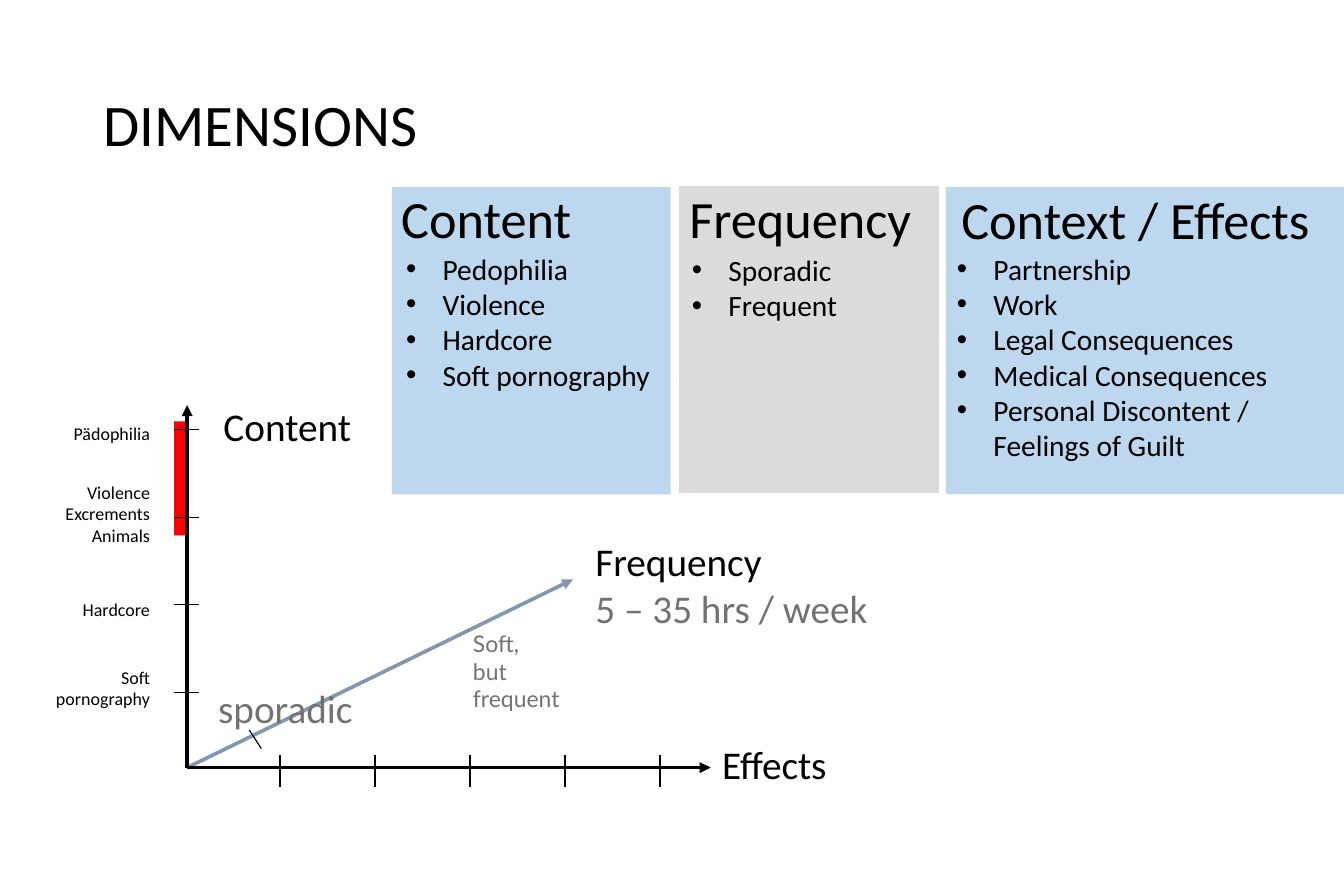
from lxml.etree import SubElement
from pptx import Presentation
from pptx.dml.color import RGBColor
from pptx.enum.shapes import MSO_CONNECTOR, MSO_SHAPE
from pptx.enum.text import MSO_ANCHOR, MSO_AUTO_SIZE, PP_ALIGN
from pptx.oxml.ns import qn
from pptx.util import Cm, Pt

BLACK, GREY, RED = "000000", "767171", "FF0000"
LIGHT_BLUE, LIGHT_GREY, STEEL_BLUE = "BDD7EE", "DBDBDB", "8497B0"
SLIDE_WIDTH, SLIDE_HEIGHT = 29.01, 19.05
ORIGIN = (4.04, 16.56)


def color(hex_string):
    return RGBColor.from_string(hex_string)


class SlideBuilder:
    """Holds the text style and the slide being built; lengths are in cm."""

    def __init__(self, slide, font="Calibri"):
        self.slide = slide
        self.font = font

    def style(self, paragraph, size, hex_string=BLACK, font=None, align=PP_ALIGN.LEFT):
        paragraph.alignment = align
        paragraph.space_before = Pt(0)
        paragraph.font.name = font or self.font
        paragraph.font.size = Pt(size)
        paragraph.font.bold = False
        paragraph.font.color.rgb = color(hex_string)

    def place(self, shape, left, top, width, height):
        shape.left, shape.top = Cm(left), Cm(top)
        shape.width, shape.height = Cm(width), Cm(height)

    def title(self, text, left, top, width, height):
        title = self.slide.shapes.title
        self.place(title, left, top, width, height)
        title.text_frame.text = text
        title.text_frame.vertical_anchor = MSO_ANCHOR.MIDDLE
        paragraph = title.text_frame.paragraphs[0]
        paragraph.line_spacing = 0.9
        self.style(paragraph, 36)

    def rectangle(self, left, top, width, height, fill):
        shape = self.slide.shapes.add_shape(
            MSO_SHAPE.RECTANGLE, Cm(left), Cm(top), Cm(width), Cm(height))
        shape.shadow.inherit = False
        shape.fill.solid()
        shape.fill.fore_color.rgb = color(fill)
        shape.line.fill.background()

    def text(self, text, left, top, width, height, size, **style):
        box = self.slide.shapes.add_textbox(Cm(left), Cm(top), Cm(width), Cm(height))
        box.text_frame.word_wrap = True
        box.text_frame.text = text
        for paragraph in box.text_frame.paragraphs:
            self.style(paragraph, size, **style)
        return box.text_frame

    def bullet_list(self, placeholder, items, left, top, width, height):
        """Fill a body placeholder and bring it in front of its panel."""
        self.place(placeholder, left, top, width, height)
        tree = placeholder.element.getparent()
        tree.append(placeholder.element)
        frame = placeholder.text_frame
        frame.text = "\n".join(items)
        frame.word_wrap = True
        frame.auto_size = MSO_AUTO_SIZE.NONE
        frame.vertical_anchor = MSO_ANCHOR.TOP
        for paragraph in frame.paragraphs:
            properties = paragraph._p.get_or_add_pPr()
            properties.set("marL", str(Cm(0.79)))
            properties.set("indent", str(Cm(-0.79)))
            SubElement(properties, qn("a:buFont")).set("typeface", "Arial")
            SubElement(properties, qn("a:buChar")).set("char", "•")
            self.style(paragraph, 18)

    def line(self, start, end, width, hex_string=BLACK, arrow=False):
        connector = self.slide.shapes.add_connector(
            MSO_CONNECTOR.STRAIGHT, *map(Cm, start + end))
        connector.line.width = Pt(width)
        connector.line.color.rgb = color(hex_string)
        properties = connector.element.spPr
        if arrow:
            SubElement(properties.find(qn("a:ln")), qn("a:tailEnd")).set("type", "triangle")
        SubElement(properties, qn("a:effectLst"))


def add_panels(builder):
    # heading, items, fill, panel box, heading box (left, top, width), list box
    panels = [
        ("Content", ["Pedophilia", "Violence", "Hardcore", "Soft pornography"],
         LIGHT_BLUE, (8.46, 4.04, 6.02, 6.63), (8.41, 3.89, 5.84), (8.51, 5.28, 6.12, 3.33)),
        ("Frequency", ["Sporadic", "Frequent"],
         LIGHT_GREY, (14.66, 4.01, 5.61, 6.63), (14.63, 3.89, 5.36), (14.68, 5.31, 4.55, 1.8)),
        ("Context / Effects",
         ["Partnership", "Work", "Legal Consequences", "Medical Consequences",
          "Personal Discontent / Feelings of Guilt"],
         LIGHT_BLUE, (20.42, 4.03, SLIDE_WIDTH - 20.42, 6.63), (20.5, 3.91, 8.23),
         (20.4, 5.28, 7.87, 4.88)),
    ]
    bodies = list(builder.slide.placeholders)[1:]
    for body, (heading, items, fill, panel, heading_box, list_box) in zip(bodies, panels):
        builder.rectangle(*panel, fill)
        builder.text(heading, *heading_box, 1.63, 32)
        builder.bullet_list(body, items, *list_box)
    for unused in bodies[len(panels):]:
        unused.element.getparent().remove(unused.element)


def add_axes(builder):
    builder.rectangle(3.76, 9.09, 0.28, 2.46, RED)
    builder.line(ORIGIN, (12.37, 12.5), 2.25, STEEL_BLUE, arrow=True)
    builder.line(ORIGIN, (ORIGIN[0], 8.74), 2.25, arrow=True)
    builder.line(ORIGIN, (15.34, ORIGIN[1]), 2.25, arrow=True)

    content_labels = [("Pädophilia", 8.99, 0.74), ("Violence Excrements Animals", 10.26, 1.68),
                      ("Hardcore", 12.78, 0.74), ("Soft pornography", 14.25, 1.2)]
    for index, (label, top, height) in enumerate(content_labels):
        tick = 9.27 + 1.89 * index
        builder.line((3.76, tick), (4.29, tick), 0.75)
        builder.text(label, 0.92, top, 2.57, height, 11, align=PP_ALIGN.RIGHT)
    for index in range(5):
        tick = 6.05 + 2.05 * index
        builder.line((tick, 16.28), (tick, 16.97), 1)
    builder.line((5.38, 15.75), (5.64, 16.15), 0.75)

    builder.text("Content", 3.89, 8.56, 4.62, 1.27, 24, align=PP_ALIGN.CENTER)
    builder.text("Effects", 15.34, 15.85, 4.17, 1.27, 24)
    builder.text("sporadic", 4.09, 14.63, 4.14, 1.27, 24,
                 hex_string=GREY, align=PP_ALIGN.CENTER)
    builder.text("Soft,\vbut frequent", 9.96, 13.46, 2.41, 1.9, 14,
                 hex_string=GREY, font="Lato")
    frequency = builder.text("Frequency\n5 – 35 hrs / week", 12.6, 11.46, 7.67, 2.31, 24)
    frequency.paragraphs[1].font.color.rgb = color(GREY)


def main():
    presentation = Presentation()
    presentation.slide_width = Cm(SLIDE_WIDTH)
    presentation.slide_height = Cm(SLIDE_HEIGHT)
    comparison_layout = presentation.slide_layouts[4]
    builder = SlideBuilder(presentation.slides.add_slide(comparison_layout))
    builder.title("DIMENSIONS", 1.98, 1.7, 25.02, 2.08)
    add_panels(builder)
    add_axes(builder)
    presentation.save("out.pptx")


if __name__ == "__main__":
    main()
